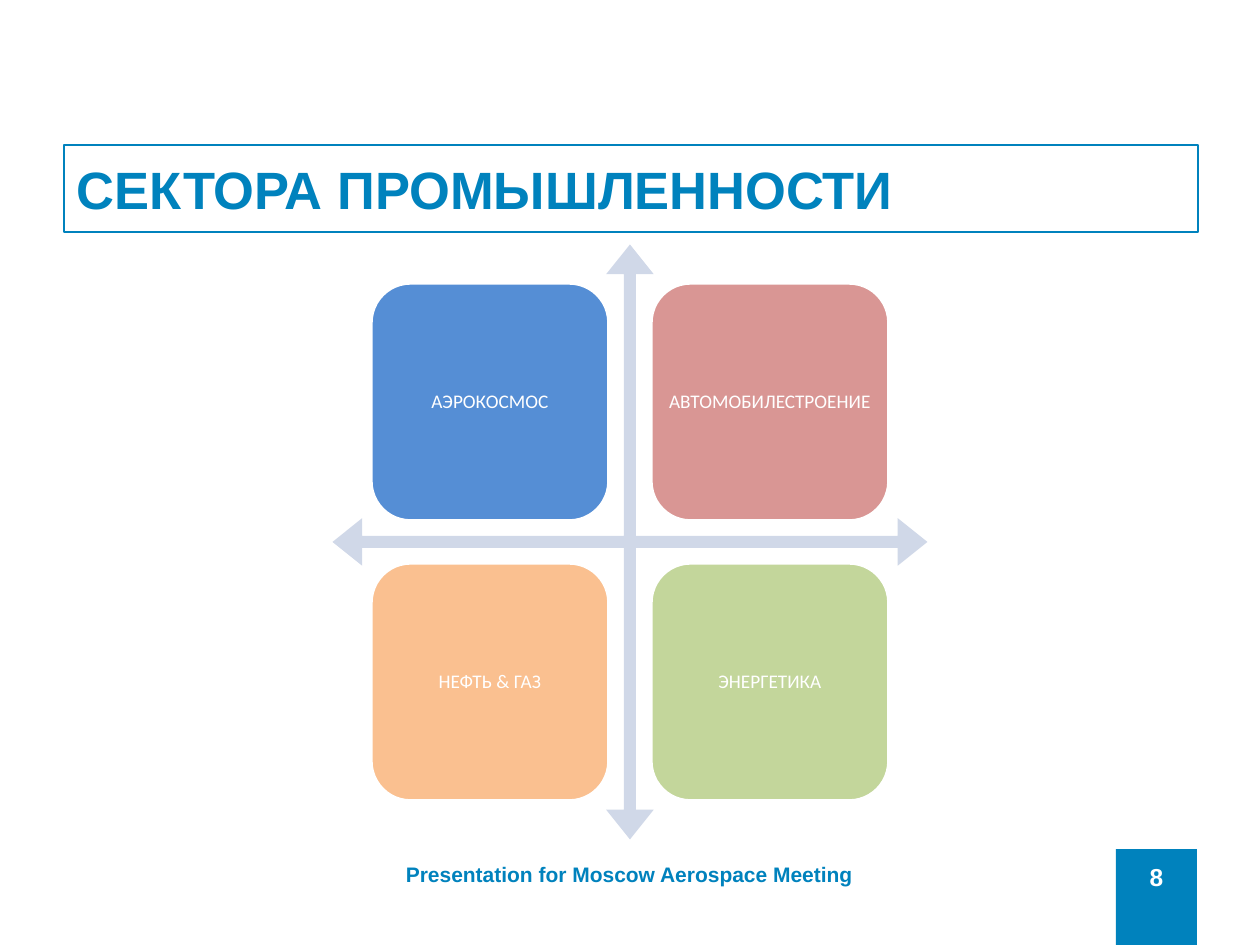
from pptx import Presentation
from pptx.dml.color import RGBColor
from pptx.enum.shapes import MSO_SHAPE as Shape
from pptx.enum.text import MSO_ANCHOR as Anchor, PP_ALIGN as Align
from pptx.util import Emu, Pt

BLUE = RGBColor(0x00, 0x82, 0xBD)
WHITE = RGBColor(0xFF, 0xFF, 0xFF)
ARROW_GREY = RGBColor(0xD0, 0xD8, 0xE8)

# Content
TITLE = "СЕКТОРА ПРОМЫШЛЕННОСТИ"
FOOTER = "Presentation for Moscow Aerospace Meeting"
PAGE_NUMBER = "8"
SECTORS = [  # row by row
    ("АЭРОКОСМОС", RGBColor(0x55, 0x8E, 0xD5)),
    ("АВТОМОБИЛЕСТРОЕНИЕ", RGBColor(0xD9, 0x96, 0x94)),
    ("НЕФТЬ & ГАЗ", RGBColor(0xFA, 0xC0, 0x90)),
    ("ЭНЕРГЕТИКА", RGBColor(0xC3, 0xD6, 0x9B)),
]

# Layout in px
SLIDE_WIDTH, SLIDE_HEIGHT = 1260, 945
CENTRE_X, CENTRE_Y = 630, 542
ARROW_SIZE = 595
TILE_SIZE, TILE_PITCH, COLUMNS = 238, 280, 2


def px(value):
    return Emu(round(value * 914400 / 126))


def add_box(slide, kind, box, fill=None, line=None, line_width=0):
    shape = slide.shapes.add_shape(kind, *map(px, box))
    shape.shadow.inherit = False
    if fill is None:
        shape.fill.background()
    else:
        shape.fill.solid()
        shape.fill.fore_color.rgb = fill
    if line is None:
        shape.line.fill.background()
    else:
        shape.line.color.rgb = line
        shape.line.width = Pt(line_width)
    return shape


def set_text(shape, text, size, color, font="Arial", bold=True,
             align=Align.CENTER, anchor=Anchor.TOP, inset=13):
    frame = shape.text_frame
    frame.text = text
    frame.word_wrap = True
    frame.vertical_anchor = anchor
    frame.margin_left = frame.margin_right = px(inset)
    frame.margin_top = frame.margin_bottom = px(inset)
    paragraph = frame.paragraphs[0]
    paragraph.alignment = align
    run_font = paragraph.runs[0].font
    run_font.name, run_font.size, run_font.bold = font, Pt(size), bold
    run_font.color.rgb = color
    return paragraph


def main():
    presentation = Presentation()
    presentation.slide_width = px(SLIDE_WIDTH)
    presentation.slide_height = px(SLIDE_HEIGHT)
    slide = presentation.slides.add_slide(presentation.slide_layouts[6])

    # Title
    title = add_box(slide, Shape.RECTANGLE, (64, 145, 1134, 87), line=BLUE, line_width=1.5)
    set_text(title, TITLE, 30, BLUE, align=Align.LEFT, anchor=Anchor.MIDDLE)

    # Footer
    footer = slide.shapes.add_textbox(px(322), px(849), px(615), px(96))
    set_text(footer, FOOTER, 12, BLUE)

    # Four-way arrow
    arrow = add_box(
        slide, Shape.QUAD_ARROW,
        (CENTRE_X - ARROW_SIZE / 2, CENTRE_Y - ARROW_SIZE / 2, ARROW_SIZE, ARROW_SIZE),
        fill=ARROW_GREY)
    for index, value in enumerate((0.02, 0.04, 0.05)):
        arrow.adjustments[index] = value

    # Sector tiles, centred on the arrow
    offset = (TILE_PITCH + TILE_SIZE) / 2
    for index, (name, color) in enumerate(SECTORS):
        row, column = divmod(index, COLUMNS)
        left = CENTRE_X - offset + column * TILE_PITCH
        top = CENTRE_Y - offset + row * TILE_PITCH
        tile = add_box(slide, Shape.ROUNDED_RECTANGLE, (left, top, TILE_SIZE, TILE_SIZE),
                       fill=color, line=WHITE, line_width=2)
        paragraph = set_text(tile, name, 11, WHITE, font="Calibri", bold=False,
                             anchor=Anchor.MIDDLE, inset=5)
        paragraph.line_spacing = 0.9

    # Page number
    page = add_box(slide, Shape.RECTANGLE, (1116, 849, 81, 96), fill=BLUE)
    set_text(page, PAGE_NUMBER, 14, WHITE)

    presentation.save("out.pptx")


if __name__ == "__main__":
    main()
